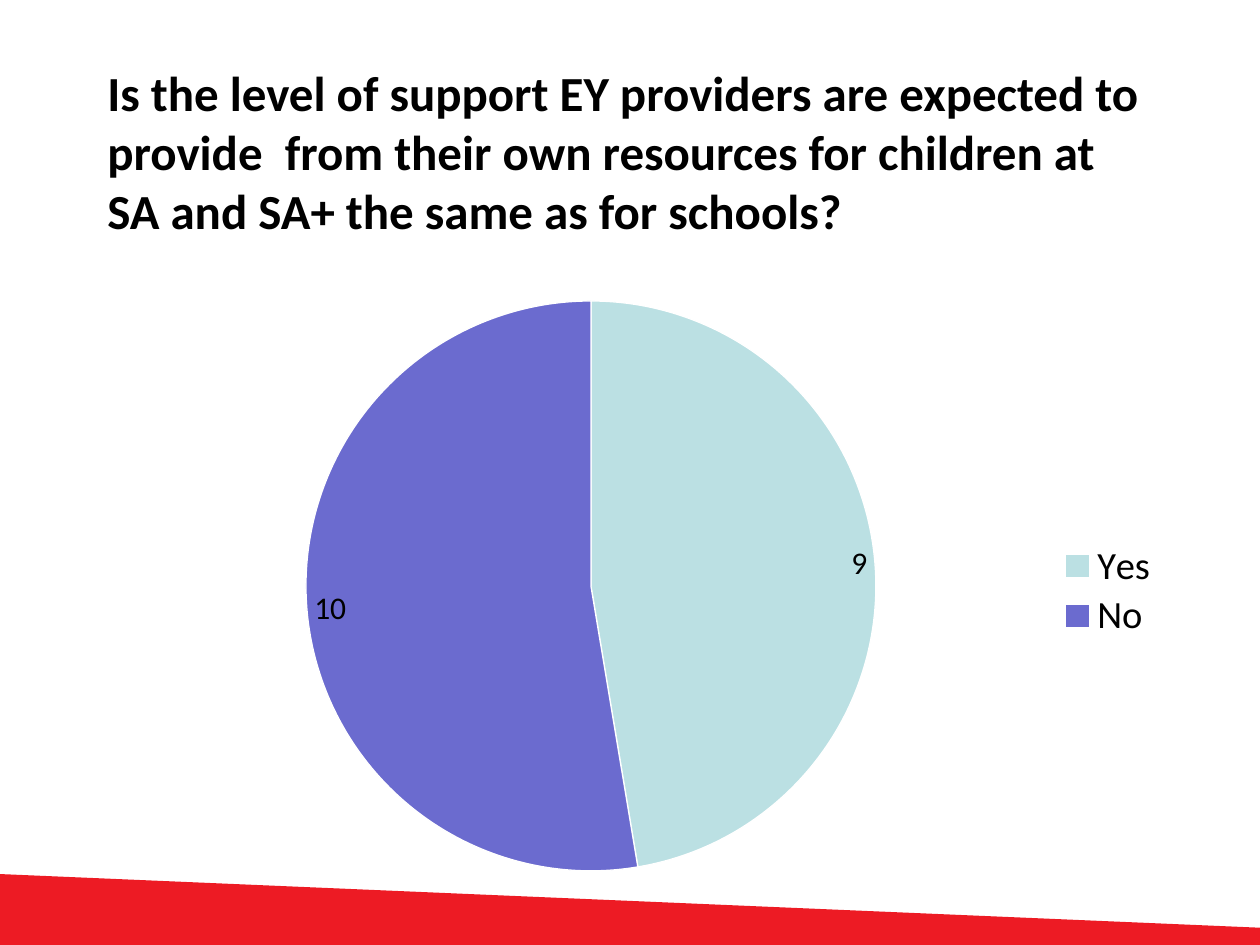
"""Build a slide with a question and a pie chart of yes and no answers."""
import pptx
import pptx.chart.data
import pptx.dml.color
import pptx.enum.chart
import pptx.enum.text
import pptx.oxml
import pptx.oxml.ns
import pptx.util

SCALE = 914400 / 126
THEME = {
    "font": "Calibri",
    "ink": "000000",
    "edge": "FFFFFF",
    "band": "ED1B24",
    "slices": ["BBE0E3", "6B6BCF"],
    "title": 28,
    "label": 18,
    "legend": 22,
}
CHART = (84, 284, 1134, 605)


def px(n):
    return pptx.util.Emu(round(n * SCALE))


def style(font, size):
    font.name = THEME["font"]
    font.size = pptx.util.Pt(THEME[size])
    font.color.rgb = pptx.dml.color.RGBColor.from_string(THEME["ink"])


deck = pptx.Presentation()
deck.slide_width, deck.slide_height = px(1260), px(945)
slide = deck.slides.add_slide(deck.slide_layouts[6])

pen = slide.shapes.build_freeform(-2, 874, scale=SCALE)
pen.add_line_segments([(-2, 946), (1265, 949), (1265, 928)], close=True)
band = pen.convert_to_shape()
band.shadow.inherit = False
band.fill.solid()
band.fill.fore_color.rgb = pptx.dml.color.RGBColor.from_string(THEME["band"])
band.line.fill.background()

title = slide.shapes.add_textbox(px(95), px(96), px(1071), px(169))
frame = title.text_frame
frame.word_wrap = True
frame.vertical_anchor = pptx.enum.text.MSO_ANCHOR.MIDDLE
frame.margin_bottom = px(65)
run = frame.paragraphs[0].add_run()
run.text = (
    "Is the level of support EY providers are expected to provide  from "
    "their own resources for children at SA and SA+ the same as for schools?"
)
style(run.font, "title")
run.font.bold = True

data = pptx.chart.data.CategoryChartData()
data.categories = ["Yes", "No"]
data.add_series("Series 1", [9, 10])
chart = slide.shapes.add_chart(
    pptx.enum.chart.XL_CHART_TYPE.PIE, *map(px, CHART), data
).chart
chart.has_title = False
style(chart.font, "label")
chart.has_legend = True
chart.legend.position = pptx.enum.chart.XL_LEGEND_POSITION.RIGHT
chart.legend.include_in_layout = False
style(chart.legend.font, "legend")

plot = chart.plots[0]
plot.vary_by_categories = True
plot.has_data_labels = True
labels = plot.data_labels
labels.show_value = True
labels.show_percentage = False
labels.position = pptx.enum.chart.XL_LABEL_POSITION.INSIDE_END
style(labels.font, "label")
for i, color in enumerate(THEME["slices"]):
    slice = plot.series[0].points[i].format
    slice.fill.solid()
    slice.fill.fore_color.rgb = pptx.dml.color.RGBColor.from_string(color)
    slice.line.color.rgb = pptx.dml.color.RGBColor.from_string(THEME["edge"])
    slice.line.width = pptx.util.Pt(0.75)

area = chart.element.find(".//" + pptx.oxml.ns.qn("c:plotArea"))
legend = chart.element.find(".//" + pptx.oxml.ns.qn("c:legend"))
left, top, width, height = CHART
for part, box, inner in [
    (area, (306, 301, 570, 570), True),
    (legend, (1056, 540, 104, 102), False),
]:
    x, y, w, h = box
    rows = [("layoutTarget", "inner")] if inner else []
    rows += [("xMode", "edge"), ("yMode", "edge")]
    rows += [("x", (x - left) / width), ("y", (y - top) / height)]
    rows += [("w", w / width), ("h", h / height)]
    body = "".join(f'<c:{tag} val="{val}"/>' for tag, val in rows)
    layout = pptx.oxml.parse_xml(
        f'<c:layout {pptx.oxml.ns.nsdecls("c")}>'
        f"<c:manualLayout>{body}</c:manualLayout></c:layout>"
    )
    for old in part.findall(pptx.oxml.ns.qn("c:layout")):
        part.remove(old)
    part.insert(0 if inner else 1, layout)

deck.save("out.pptx")
